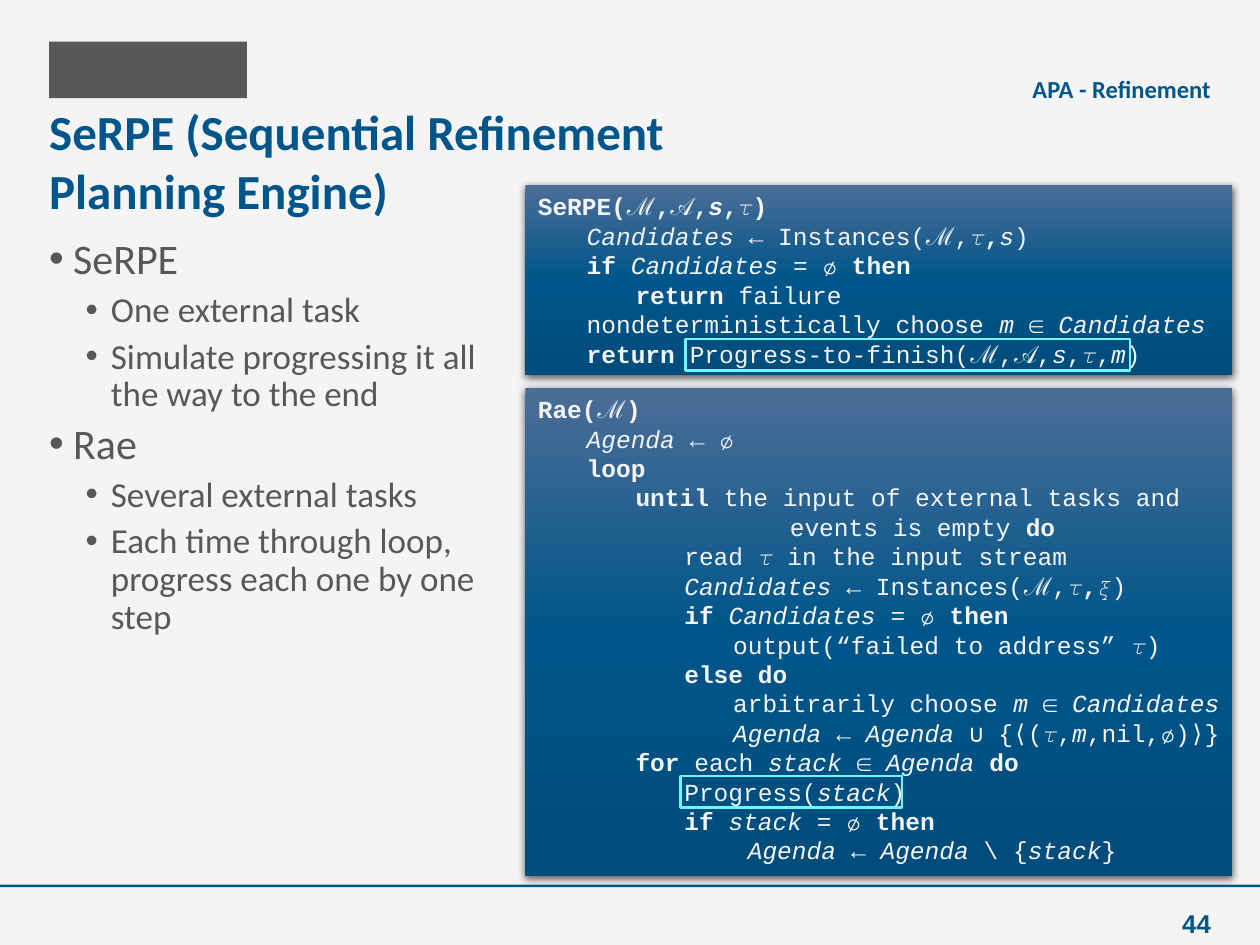
"""Build the slide that compares the SeRPE and Rae refinement procedures."""
import copy
import itertools
from dataclasses import dataclass
from typing import NamedTuple

import lxml.etree
import pptx
import pptx.dml.color
import pptx.enum.lang
import pptx.enum.shapes
import pptx.enum.text
import pptx.oxml.ns
import pptx.util

Inches = pptx.util.Inches
Pt = pptx.util.Pt
qn = pptx.oxml.ns.qn
PP_ALIGN = pptx.enum.text.PP_ALIGN
MSO_ANCHOR = pptx.enum.text.MSO_ANCHOR
LANGUAGE = pptx.enum.lang.MSO_LANGUAGE_ID


@dataclass(frozen=True)
class Theme:
    """Colours, fonts and type sizes of the slide."""
    paper: str = "F4F4F4"
    blue: str = "00568A"
    gray: str = "58585A"
    marker: str = "6FF7FF"
    panel: tuple = ("4B6D97", "00568A", "004C7B")
    text: str = "Calibri"
    code: str = "Courier New"
    digits: str = "Arial"
    title_size: float = 28
    bullet_sizes: tuple = (24, 20)
    small_size: float = 14
    number_size: float = 14.7


class Box(NamedTuple):
    """Position and size in inches."""
    left: float
    top: float
    width: float
    height: float

    def lengths(self) -> list:
        """Return the four values as lengths."""
        return [Inches(value) for value in self]


class Label(NamedTuple):
    """A bold heading, header or page number."""
    text: str
    box: Box
    font: str
    size: float
    align: PP_ALIGN


class Bullet(NamedTuple):
    """A bullet point and its level."""
    text: str
    level: int


class CodeLine(NamedTuple):
    """Tab depth and code, where * toggles bold and _ toggles italic."""
    depth: int
    code: str


class Procedure(NamedTuple):
    """A pseudocode panel and the call marked in it."""
    box: Box
    marked: Box
    lines: list


THEME = Theme()
LABELS = [
    Label("SeRPE (Sequential Refinement \vPlanning Engine)", Box(0.39, 1.11, 9.21, 0.63),
          THEME.text, THEME.title_size, PP_ALIGN.LEFT),
    Label("APA - Refinement", Box(3.94, 0.43, 5.67, 0.39),
          THEME.text, THEME.small_size, PP_ALIGN.RIGHT),
    Label("44", Box(8.82, 7.06, 0.79, 0.39),
          THEME.digits, THEME.number_size, PP_ALIGN.RIGHT),
]
BULLETS = [
    Bullet("SeRPE", 0),
    Bullet("One external task", 1),
    Bullet("Simulate progressing it all the way to the end", 1),
    Bullet("Rae", 0),
    Bullet("Several external tasks", 1),
    Bullet("Each time through loop, progress each one by one step", 1),
]
RAE = Procedure(Box(4.17, 3.08, 5.61, 3.87), Box(5.4, 6.16, 1.76, 0.25), [
    CodeLine(0, "*Rae(ℳ)*"),
    CodeLine(1, "_Agenda_ ← ∅"),
    CodeLine(1, "*loop*"),
    CodeLine(2, "*until* the input of external tasks and"),
    CodeLine(5, "events is empty *do*"),
    CodeLine(3, "read 𝜏 in the input stream"),
    CodeLine(3, "_Candidates_ ← Instances(ℳ,𝜏*,*𝜉)"),
    CodeLine(3, "*if *_Candidates_ = ∅ *then*"),
    CodeLine(4, "output(“failed to address” 𝜏)"),
    CodeLine(3, "*else do*"),
    CodeLine(4, "arbitrarily choose _m_ ∈ _Candidates_"),
    CodeLine(4, "_Agenda _← _Agenda _∪ {⟨(𝜏,_m_,nil,∅)⟩}"),
    CodeLine(2, "*for* each _stack_ ∈_ Agenda _*do*"),
    CodeLine(3, "Progress(_stack_)"),
    CodeLine(3, "*if *_stack_ = ∅ *then*"),
    CodeLine(4, "_ Agenda _← _Agenda_ \\ {_stack_}"),
])
SERPE = Procedure(Box(4.17, 1.47, 5.61, 1.51), Box(5.44, 2.69, 3.53, 0.25), [
    CodeLine(0, "*SeRPE(ℳ,𝒜,_s_,𝜏)*"),
    CodeLine(1, "_Candidates_ ← Instances(ℳ,𝜏*,*_s_)"),
    CodeLine(1, "*if *_Candidates_ = ∅ *then*"),
    CodeLine(2, "*return* failure"),
    CodeLine(1, "nondeterministically choose _m_ ∈ _Candidates_"),
    CodeLine(1, "*return* Progress-to-finish(ℳ,𝒜,_s_,𝜏,_m_)"),
])


def rgb(value: str) -> pptx.dml.color.RGBColor:
    """Turn a hex string into a colour."""
    return pptx.dml.color.RGBColor.from_string(value)


def set_font(paragraph, name: str, size: float, color: str) -> None:
    """Set the font shared by all runs of a paragraph."""
    paragraph.font.name, paragraph.font.size = name, Pt(size)
    paragraph.font.color.rgb = rgb(color)


def add_rectangle(slide, box: Box):
    """Add a rectangle without line or shadow."""
    rectangle = slide.shapes.add_shape(
        pptx.enum.shapes.MSO_SHAPE.RECTANGLE, *box.lengths())
    rectangle.shadow.inherit = False
    rectangle.line.fill.background()
    return rectangle


def add_band(slide, box: Box, color: str) -> None:
    """Add a plain filled rectangle."""
    band = add_rectangle(slide, box)
    band.fill.solid()
    band.fill.fore_color.rgb = rgb(color)


def add_text_frame(slide, box: Box, anchor: MSO_ANCHOR):
    """Add a wrapping text box without insets."""
    frame = slide.shapes.add_textbox(*box.lengths()).text_frame
    frame.word_wrap, frame.vertical_anchor = True, anchor
    frame.margin_left = frame.margin_top = frame.margin_right = frame.margin_bottom = 0
    return frame


def next_paragraph(frame, index: int):
    """Return the first paragraph or add another."""
    return frame.add_paragraph() if index else frame.paragraphs[0]


def add_label(slide, label: Label) -> None:
    """Add a bold blue label."""
    paragraph = add_text_frame(slide, label.box, MSO_ANCHOR.BOTTOM).paragraphs[0]
    paragraph.text, paragraph.alignment = label.text, label.align
    set_font(paragraph, label.font, label.size, THEME.blue)
    paragraph.font.bold = True


def add_bullets(slide, box: Box, bullets: list) -> None:
    """Add the two-level bullet list."""
    frame = add_text_frame(slide, box, MSO_ANCHOR.TOP)
    for index, bullet in enumerate(bullets):
        paragraph = next_paragraph(frame, index)
        paragraph.text, paragraph.level = bullet.text, bullet.level
        paragraph.line_spacing, paragraph.space_before = 0.9, Pt(5)
        margin, hang = ((0.19, 0.19), (0.49, 0.2))[bullet.level]
        properties = paragraph._p.get_or_add_pPr()
        properties.set("marL", str(Inches(margin)))
        properties.set("indent", str(-Inches(hang)))
        lxml.etree.SubElement(properties, qn("a:buFont"), typeface=THEME.digits)
        lxml.etree.SubElement(properties, qn("a:buChar"), char="•")
        set_font(paragraph, THEME.text, THEME.bullet_sizes[bullet.level], THEME.gray)


def style_panel(panel) -> None:
    """Give a panel its vertical gradient and soft shadow."""
    panel.fill.gradient()
    panel.fill.gradient_angle = 270
    properties = panel._element.spPr
    stops = properties.find(".//" + qn("a:gsLst"))
    stops.append(copy.deepcopy(stops[-1]))
    for index, stop in enumerate(panel.fill.gradient_stops):
        stop.position, stop.color.rgb = index / 2, rgb(THEME.panel[index])
    shadow = lxml.etree.SubElement(
        properties.find(qn("a:effectLst")), qn("a:outerShdw"), blurRad=str(Pt(4.5)),
        dist=str(Pt(1.5)), dir="5400000", rotWithShape="0")
    black = lxml.etree.SubElement(shadow, qn("a:srgbClr"), val="000000")
    lxml.etree.SubElement(black, qn("a:alpha"), val="63000")


def add_code(paragraph, line: CodeLine) -> None:
    """Write a code line, with Greek letters in runs of another language to stay apart."""
    paragraph.alignment = PP_ALIGN.LEFT
    tabs = lxml.etree.SubElement(paragraph._p.get_or_add_pPr(), qn("a:tabLst"))
    for stop in range(1, 5):
        lxml.etree.SubElement(tabs, qn("a:tab"), pos=str(Inches(1.55 * stop / 4)), algn="l")
    set_font(paragraph, THEME.code, THEME.small_size, THEME.paper)
    code = "\t" * line.depth + line.code
    for bold_index, bold_part in enumerate(code.split("*")):
        for italic_index, piece in enumerate(bold_part.split("_")):
            for greek, letters in itertools.groupby(piece, lambda letter: letter in "𝜏𝜉"):
                run = paragraph.add_run()
                run.text = "".join(letters)
                run.font.bold, run.font.italic = bold_index % 2 == 1, italic_index % 2 == 1
                run.font.language_id = LANGUAGE.ENGLISH_UK if greek else LANGUAGE.ENGLISH_US


def add_procedure(slide, procedure: Procedure) -> None:
    """Add a pseudocode panel and the frame around its marked call."""
    panel = add_rectangle(slide, procedure.box)
    style_panel(panel)
    frame = panel.text_frame
    frame.word_wrap, frame.margin_right = True, Inches(0.05)
    frame.auto_size = pptx.enum.text.MSO_AUTO_SIZE.SHAPE_TO_FIT_TEXT
    frame.vertical_anchor = MSO_ANCHOR.TOP
    for index, line in enumerate(procedure.lines):
        add_code(next_paragraph(frame, index), line)
    marker = add_rectangle(slide, procedure.marked)
    marker.fill.background()
    marker.line.color.rgb, marker.line.width = rgb(THEME.marker), Pt(1.5)


def main() -> None:
    """Build and save the slide."""
    deck = pptx.Presentation()
    deck.slide_width, deck.slide_height = Inches(10), Inches(7.5)
    slide = deck.slides.add_slide(deck.slide_layouts[6])
    slide.background.fill.solid()
    slide.background.fill.fore_color.rgb = rgb(THEME.paper)
    add_band(slide, Box(0.39, 0.33, 1.57, 0.45), THEME.gray)
    add_band(slide, Box(0, 7.02, 10, 0.02), THEME.blue)
    for label in LABELS:
        add_label(slide, label)
    add_bullets(slide, Box(0.39, 1.89, 3.78, 5.01), BULLETS)
    for procedure in (RAE, SERPE):
        add_procedure(slide, procedure)
    deck.save("out.pptx")


if __name__ == "__main__":
    main()
